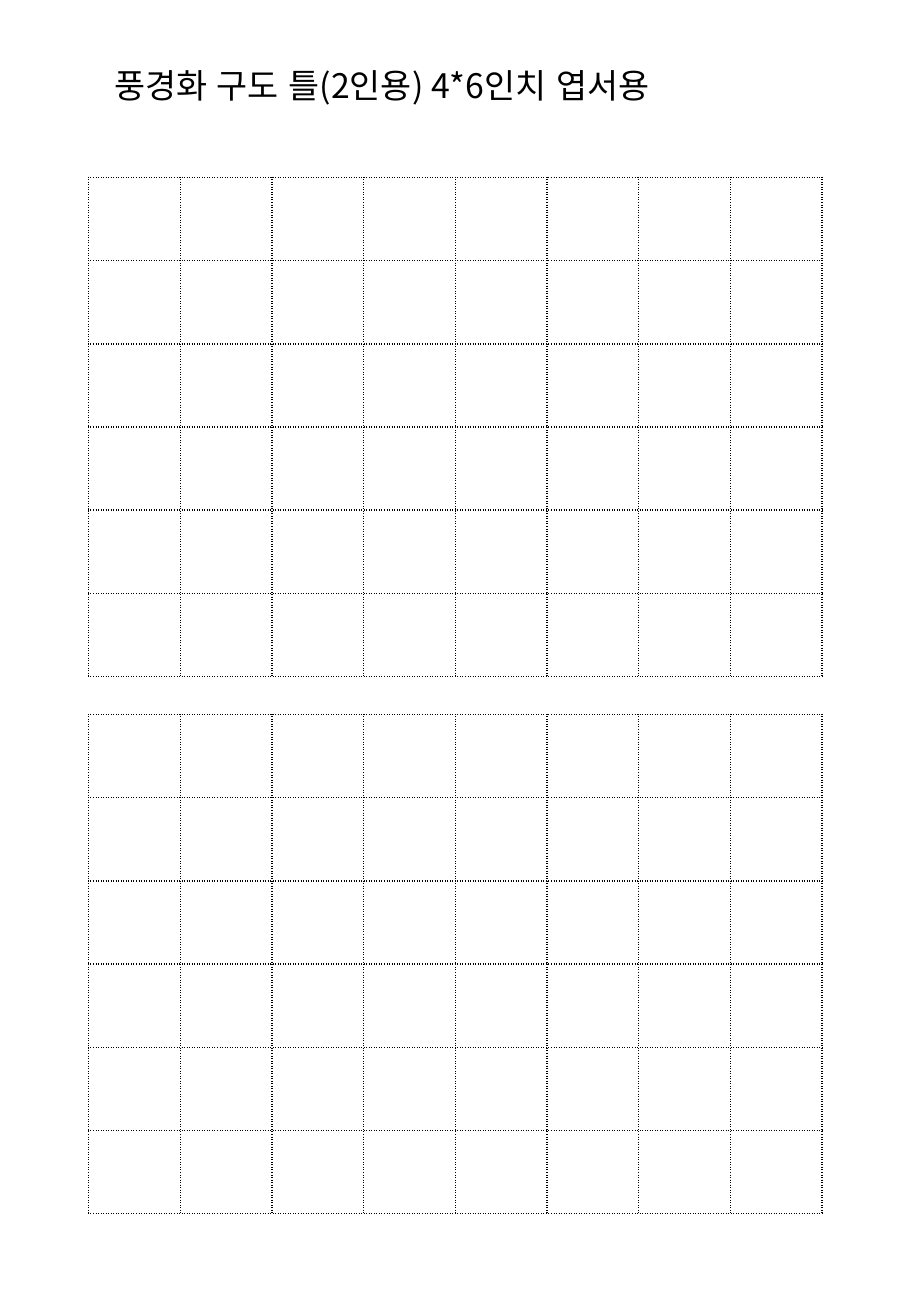
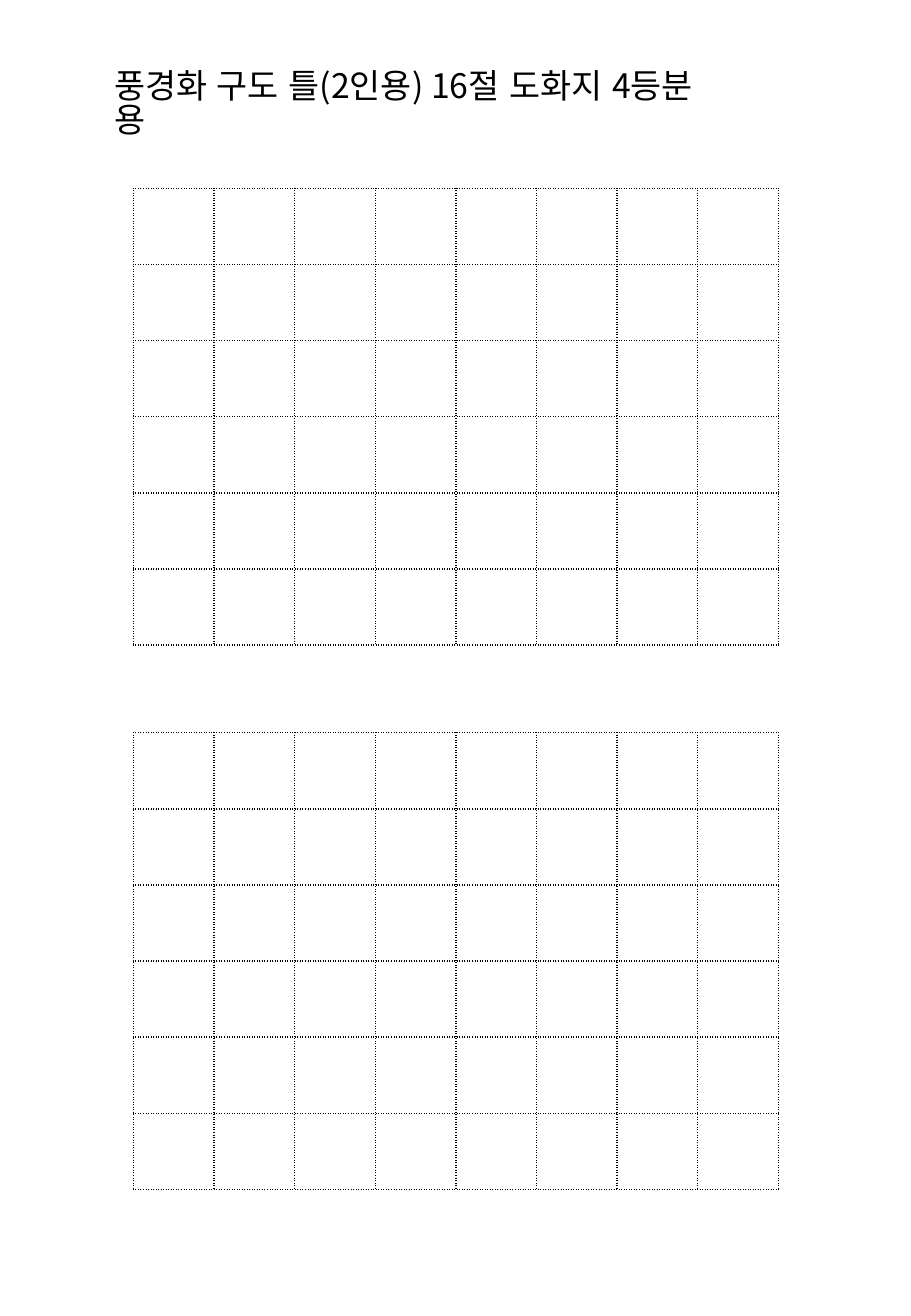
"""Build two pages of dotted landscape composition grids."""
from lxml.etree import SubElement
from pptx import Presentation
from pptx.dml.color import RGBColor
from pptx.enum.lang import MSO_LANGUAGE_ID
from pptx.enum.text import MSO_ANCHOR, MSO_AUTO_SIZE, PP_ALIGN
from pptx.oxml.ns import qn
from pptx.util import Emu, Pt

PAGES = [
    {"title": "풍경화 구도 틀(2인용) 4*6인치 엽서용",
     "left": 73, "tops": (146, 588), "size": (604, 411)},
    {"title": "풍경화 구도 틀(2인용) 16절 도화지 4등분 용",
     "left": 110, "tops": (155, 603), "size": (531, 376)},
]
COLUMNS, ROWS = 8, 6
PAGE_SIZE = (750, 1083)
TITLE_BOX = (84, 54, 501, 44)
COLORS = {"ink": "000000", "paper": "FFFFFF"}
FONT = "Noto Sans CJK KR"


def px(length):
    """Convert hundredths of an inch to EMU."""
    return Emu(round(length * 9144))


def add_title(slide, wording):
    """Fill and format the title placeholder."""
    title = slide.shapes.title
    title.left, title.top, title.width, title.height = map(px, TITLE_BOX)
    frame = title.text_frame
    frame.word_wrap = True
    frame.auto_size = MSO_AUTO_SIZE.SHAPE_TO_FIT_TEXT
    frame.vertical_anchor = MSO_ANCHOR.TOP
    paragraph = frame.paragraphs[0]
    paragraph.alignment = PP_ALIGN.LEFT
    paragraph.line_spacing = 0.84
    run = paragraph.add_run()
    run.text = wording
    run.font.size = Pt(20)
    run.font.name = FONT
    run.font.language_id = MSO_LANGUAGE_ID.KOREAN
    run.font.color.rgb = RGBColor.from_string(COLORS["ink"])
    SubElement(run.font._element, qn("a:ea"), typeface=FONT)


def style_cell(cell):
    """Give a cell dotted borders and a plain fill."""
    properties = cell._tc.get_or_add_tcPr()
    for side in ("lnL", "lnR", "lnT", "lnB"):
        border = SubElement(properties, qn(f"a:{side}"), w=str(Pt(1)))
        fill = SubElement(border, qn("a:solidFill"))
        SubElement(fill, qn("a:srgbClr"), val=COLORS["ink"])
        SubElement(border, qn("a:prstDash"), val="sysDot")
    cell.fill.solid()
    cell.fill.fore_color.rgb = RGBColor.from_string(COLORS["paper"])


def add_grid(slide, left, top, width, height):
    """Add one grid of equal cells."""
    grid = slide.shapes.add_table(
        ROWS, COLUMNS, px(left), px(top), px(width), px(height)).table
    grid.first_row = grid.horz_banding = False
    for column in grid.columns:
        column.width = px(width / COLUMNS)
    for row in grid.rows:
        row.height = px(height / ROWS)
    for cell in grid.iter_cells():
        style_cell(cell)


def main():
    """Build and save the pages."""
    deck = Presentation()
    deck.slide_width, deck.slide_height = map(px, PAGE_SIZE)
    for page in PAGES:
        slide = deck.slides.add_slide(deck.slide_layouts.get_by_name("Title Only"))
        add_title(slide, page["title"])
        for top in page["tops"]:
            add_grid(slide, page["left"], top, *page["size"])
    deck.save("out.pptx")


if __name__ == "__main__":
    main()
